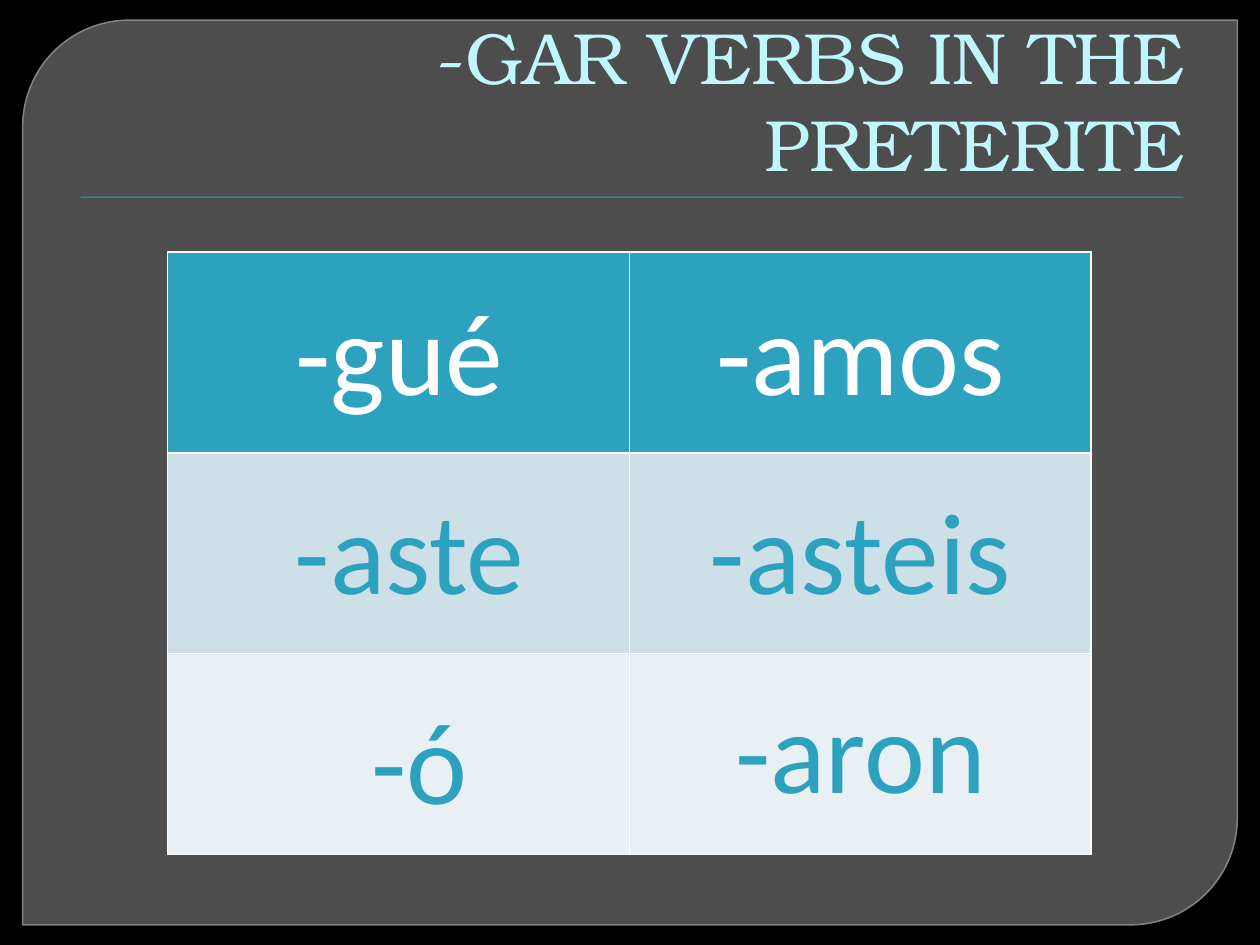
from lxml import etree
from pptx import Presentation
from pptx.dml.color import RGBColor
from pptx.enum.shapes import MSO_SHAPE as SHAPE
from pptx.enum.text import MSO_ANCHOR as ANCHOR, MSO_AUTO_SIZE as AUTO, PP_ALIGN as ALIGN
from pptx.oxml.ns import qn
from pptx.util import Inches, Pt

BLACK = RGBColor(0x00, 0x00, 0x00)
GRAY = RGBColor(0x77, 0x77, 0x77)
EDGE = RGBColor(0x8E, 0x8E, 0x8E)
TEAL = RGBColor(0x2D, 0xA2, 0xBF)
PALE_CYAN = RGBColor(0xC0, 0xF7, 0xFF)
WHITE = RGBColor(0xFF, 0xFF, 0xFF)
BAND_FILLS = [TEAL, RGBColor(0xCD, 0xE0, 0xE8), RGBColor(0xE8, 0xF0, 0xF4)]
BAND_TEXT = [WHITE, TEAL, TEAL]


def set_alpha(fill, percent):
    clr = fill._xPr.find(qn("a:solidFill"))[0]
    etree.SubElement(clr, qn("a:alpha"), val=str(percent * 1000))


def write(tf, text, align, color, fmt):
    tf.word_wrap = True
    p = tf.paragraphs[0]
    p.alignment = align
    r = p.add_run()
    r.text = text
    for name, value in fmt.items():
        setattr(r.font, name, value)
    r.font.color.rgb = color


prs = Presentation()
prs.slide_width, prs.slide_height = Inches(10), Inches(7.5)
s = prs.slides.add_slide(prs.slide_layouts[5])
s.background.fill.solid()
s.background.fill.fore_color.rgb = BLACK

panel = s.shapes.add_shape(SHAPE.ROUND_2_DIAG_RECTANGLE,
                           Inches(0.18), Inches(0.16), Inches(9.64), Inches(7.18))
panel.adjustments[0] = 0.118
panel.adjustments[1] = 0
panel.line.color.rgb = EDGE
panel.line.width = Pt(0.87)
set_alpha(panel.line.fill, 88)

rule = s.shapes.add_shape(SHAPE.RECTANGLE, Inches(0.64), Inches(1.56), Inches(8.75), Inches(0.01))
rule.line.fill.background()

for sp, color in [(panel, GRAY), (rule, TEAL)]:
    sp.shadow.inherit = False
    sp.fill.solid()
    sp.fill.fore_color.rgb = color
set_alpha(panel.fill, 65)

title = s.shapes.title
title.left, title.top, title.width, title.height = Inches(0.5), Inches(0.28), Inches(9), Inches(1.25)
tf = title.text_frame
tf.auto_size = AUTO.NONE
tf.vertical_anchor = ANCHOR.BOTTOM
write(tf, "-GAR VERBS IN THE PRETERITE", ALIGN.RIGHT, PALE_CYAN,
      {"name": "TeX Gyre Bonum", "size": Pt(41.4)})
s.shapes._spTree.append(title._element)

table = s.shapes.add_table(3, 2, Inches(1.33), Inches(2), Inches(7.33), Inches(4.78)).table
for row, color in zip(table.rows, BAND_FILLS):
    for cell in row.cells:
        cell.fill.solid()
        cell.fill.fore_color.rgb = color

endings = [
    ("-gué", 0, 1.67, 2.17),
    ("-aste", 1, 1.75, 3.75),
    ("-ó", 2, 1.83, 5.42),
    ("-amos", 0, 5.33, 2.17),
    ("-aron", 2, 5.33, 5.33),
    ("-asteis", 1, 5.33, 3.75),
]
for text, band, x, y in endings:
    tf = s.shapes.add_textbox(Inches(x), Inches(y), Inches(3), Inches(1.21)).text_frame
    tf.auto_size = AUTO.SHAPE_TO_FIT_TEXT
    write(tf, text, ALIGN.CENTER, BAND_TEXT[band], {"name": "Calibri", "size": Pt(66)})

prs.save("out.pptx")
